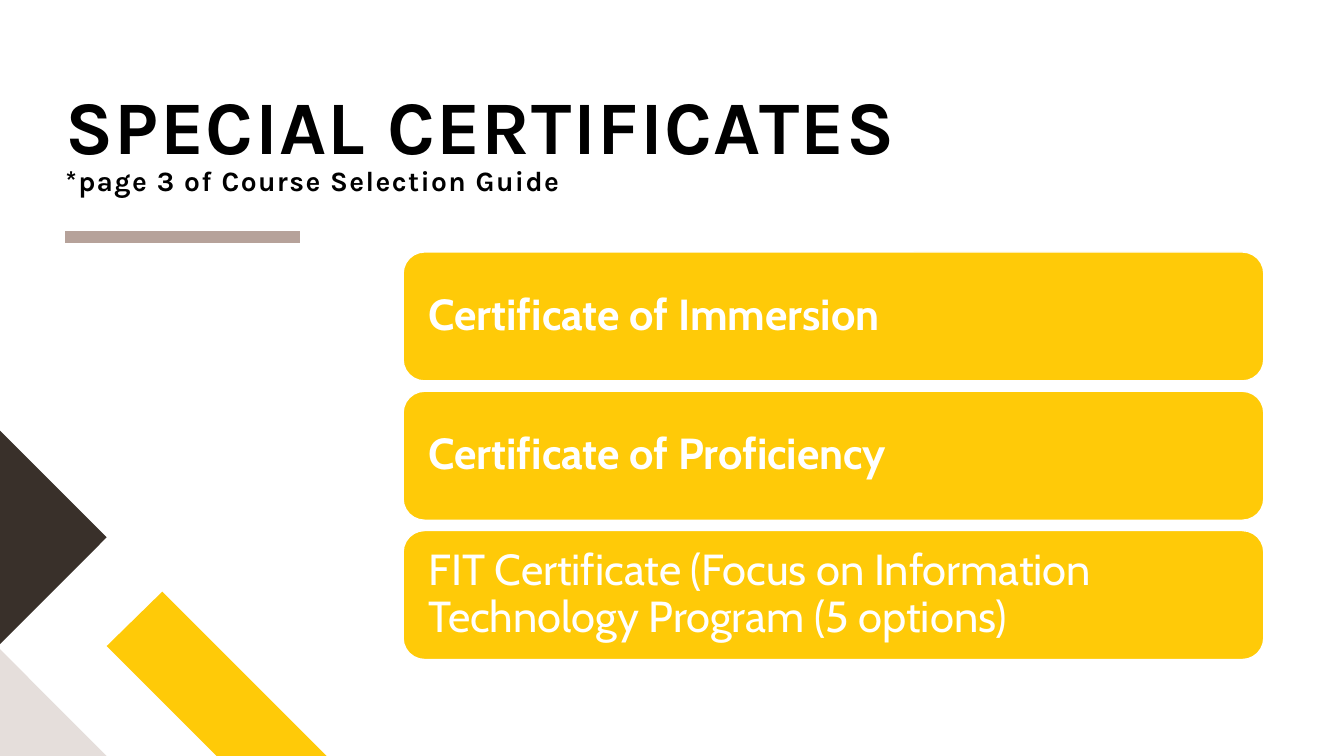
from lxml import etree
from pptx import Presentation
from pptx.dml.color import RGBColor
from pptx.enum import shapes, text
from pptx.oxml import ns
from pptx.util import Cm, Pt

# Content
TITLE = [("SPECIAL CERTIFICATES", 54), ("*page 3 of Course Selection Guide", 20)]
CERTIFICATES = [
    ("Certificate of Immersion", True),
    ("Certificate of Proficiency", True),
    ("FIT Certificate (Focus on Information Technology Program (5 options)", False),
]

# Colours
BLACK = RGBColor(0x00, 0x00, 0x00)
WHITE = RGBColor(0xFF, 0xFF, 0xFF)
YELLOW = RGBColor(0xFF, 0xCA, 0x08)
PALE = RGBColor(0xE5, 0xDE, 0xDB)
BROWN = RGBColor(0x39, 0x30, 0x2A)
TAUPE = RGBColor(0xB6, 0xA2, 0x9A)

# Corner decoration: colour and outline in cm
CORNER = [
    (YELLOW, [(8.23, 19.05), (5.46, 19.05), (2.69, 16.28), (4.09, 14.91)]),
    (PALE, [(2.69, 19.05), (0, 19.05), (0, 16.36)]),
    (BROWN, [(0, 10.85), (2.69, 13.54), (0, 16.23)]),
]

# Layout in cm
MARGIN = 1.65
CARD_LEFT, CARD_TOP, CARD_WIDTH, CARD_HEIGHT = 10.16, 6.35, 21.69, 3.25
CARD_PITCH = 3.51


def set_insets(frame, inset):
    frame.margin_left = frame.margin_right = Cm(inset)
    frame.margin_top = frame.margin_bottom = Cm(inset)
    frame.word_wrap = True


def add_span(para, words, font, size, colour, bold):
    span = para.add_run()
    span.text = words
    span.font.name = font
    span.font.size = Pt(size)
    span.font.color.rgb = colour
    span.font.bold = bold
    return span


deck = Presentation()
deck.slide_width, deck.slide_height = Cm(33.87), Cm(19.05)
page = deck.slides.add_slide(deck.slide_layouts[6])

# Rule below the title
rule = page.shapes.add_connector(
    shapes.MSO_CONNECTOR.STRAIGHT, Cm(MARGIN), Cm(5.97), Cm(7.57), Cm(5.97))
rule.line.color.rgb = TAUPE
rule.line.width = Pt(8)
etree.SubElement(rule._element.spPr, ns.qn("a:effectLst"))

# Corner decoration
for colour, outline in CORNER:
    points = [(Cm(x), Cm(y)) for x, y in outline]
    builder = page.shapes.build_freeform(*points[0])
    builder.add_line_segments(points[1:], close=True)
    piece = builder.convert_to_shape()
    piece.shadow.inherit = False
    piece.fill.solid()
    piece.fill.fore_color.rgb = colour
    piece.line.fill.background()

# Title
box = page.shapes.add_textbox(Cm(MARGIN), Cm(0.28), Cm(30.2), Cm(4.67))
set_insets(box.text_frame, 0)
box.text_frame.vertical_anchor = text.MSO_ANCHOR.BOTTOM
para = box.text_frame.paragraphs[0]
para.line_spacing = 0.8
for number, (words, size) in enumerate(TITLE):
    if number:
        para.add_line_break()
    span = add_span(para, words, "Karla", size, BLACK, True)
    span._r.get_or_add_rPr().set("spc", "100")

# Certificate cards
for number, (words, bold) in enumerate(CERTIFICATES):
    card = page.shapes.add_shape(
        shapes.MSO_SHAPE.ROUNDED_RECTANGLE, Cm(CARD_LEFT),
        Cm(CARD_TOP + number * CARD_PITCH), Cm(CARD_WIDTH), Cm(CARD_HEIGHT))
    card.shadow.inherit = False
    card.fill.solid()
    card.fill.fore_color.rgb = YELLOW
    card.line.color.rgb = WHITE
    card.line.width = Pt(1)
    set_insets(card.text_frame, 0.48)
    card.text_frame.vertical_anchor = text.MSO_ANCHOR.MIDDLE
    para = card.text_frame.paragraphs[0]
    para.alignment = text.PP_ALIGN.LEFT
    para.line_spacing = 0.9
    add_span(para, words, "Cabin", 31, WHITE, bold)

deck.save("out.pptx")
